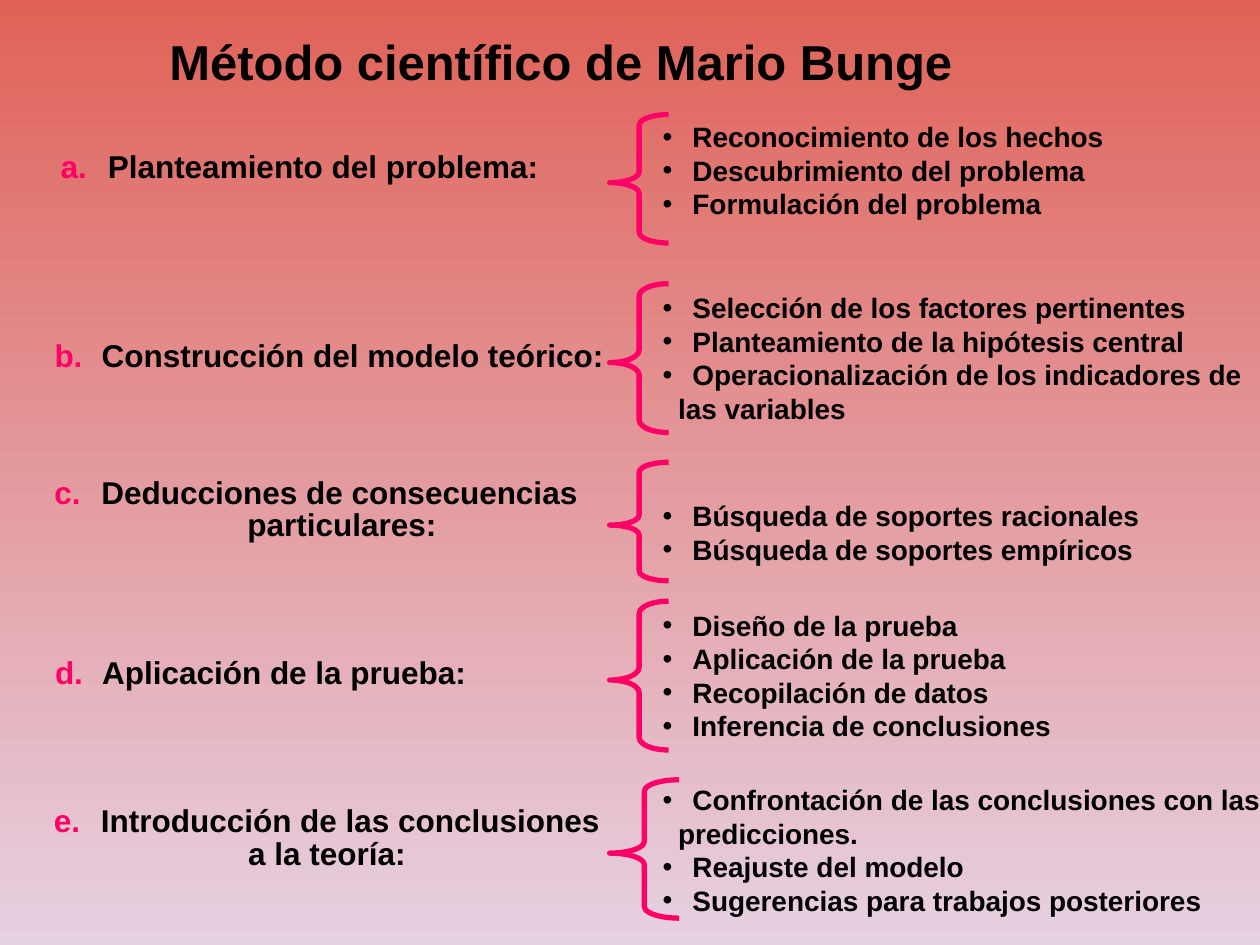
import pptx
import pptx.util
import pptx.dml.color
import pptx.enum.shapes
import pptx.enum.text
import pptx.oxml.ns
from lxml import etree

Cm = pptx.util.Cm
ALIGN = pptx.enum.text.PP_ALIGN
ANCHOR = pptx.enum.text.MSO_ANCHOR
PINK = "FF0066"
BRACE_LEFT, LIST_LEFT = 12.29, 13.36

# Lengths in cm. label_box is left, offset, width, height and list_box is
# offset, width, height; offsets count from the top of the section.
# continued holds the indexes of list lines without a bullet.
SECTIONS = [
    dict(top=2.31, height=2.59, label_box=(1.05, 0.53, 9.98, 1.3),
         label=["Planteamiento del problema:"], align=ALIGN.CENTER,
         list_box=(0.03, 9.8, 2.18),
         items=["Reconocimiento de los hechos", "Descubrimiento del problema",
                "Formulación del problema"]),
    dict(top=5.72, height=3, label_box=(1.1, 0.92, 11.4, 1.3),
         label=["Construcción del modelo teórico:"], align=ALIGN.LEFT,
         list_box=(0.2, 12, 2.59),
         items=["Selección de los factores pertinentes",
                "Planteamiento de la hipótesis central",
                "Operacionalización de los indicadores de", "las variables"],
         continued=[3]),
    dict(top=9.32, height=2.39, label_box=(0.91, 0.21, 10.92, 1.83),
         label=["Deducciones de consecuencias", "particulares:"],
         align=ALIGN.CENTER, spacing=0.85, second_indent=1.05,
         list_box=(0.41, 10.2, 2.01),
         items=["Búsqueda de soportes racionales",
                "Búsqueda de soportes empíricos"]),
    dict(top=12.12, height=3, label_box=(1.11, 1.04, 8.9, 1.17),
         label=["Aplicación de la prueba:"], align=ALIGN.LEFT, spacing=0.85,
         list_box=(0.2, 11.4, 2.59),
         items=["Diseño de la prueba", "Aplicación de la prueba",
                "Recopilación de datos", "Inferencia de conclusiones"]),
    dict(top=15.72, height=2.79, brace_width=1.4,
         label_box=(0.9, 0.43, 11.38, 1.83),
         label=["Introducción de las conclusiones", "a la teoría:"],
         align=ALIGN.CENTER, spacing=0.85,
         list_box=(0.41, 12.3, 2.01),
         items=["Confrontación de las conclusiones con las", "predicciones.",
                "Reajuste del modelo", "Sugerencias para trabajos posteriores"],
         continued=[1]),
]


def color(value):
    return pptx.dml.color.RGBColor.from_string(value)


def add_text(para, text, size=16, align=ALIGN.LEFT, spacing=None, margin=0,
             hanging=0):
    span = para.add_run()
    span.text = text
    span.font.name = "Arial"
    span.font.size = pptx.util.Pt(size)
    span.font.bold = True
    span.font.color.rgb = color("000000")
    para.alignment = align
    if spacing:
        para.line_spacing = spacing
    properties = para._p.get_or_add_pPr()
    properties.set("marL", str(Cm(margin)))
    properties.set("indent", str(-Cm(hanging)))


def add_bullet(para, kind, tint=None, **attributes):
    properties = para._p.get_or_add_pPr()
    qn = pptx.oxml.ns.qn
    if tint:
        bullet_color = etree.SubElement(properties, qn("a:buClr"))
        etree.SubElement(bullet_color, qn("a:srgbClr"), val=tint)
    etree.SubElement(properties, qn("a:buFont"), typeface="Arial")
    etree.SubElement(properties, qn(kind), **attributes)


def add_paragraphs(page, box, count, anchor):
    """Add a text box without side margins and return its paragraphs."""
    frame = page.shapes.add_textbox(*map(Cm, box)).text_frame
    frame.word_wrap = True
    frame.vertical_anchor = anchor
    frame.margin_left = frame.margin_right = 0
    return [frame.paragraphs[0]] + [frame.add_paragraph() for _ in range(count - 1)]


def add_title(page, box, text):
    title = page.shapes.title
    title.left, title.top, title.width, title.height = map(Cm, box)
    title.text_frame.vertical_anchor = ANCHOR.MIDDLE
    add_text(title.text_frame.paragraphs[0], text, size=28, align=ALIGN.CENTER)


def add_section(page, number, top, height, label_box, label, align, list_box,
                items, brace_width=1.19, spacing=None, second_indent=0,
                continued=()):
    # Detail list
    offset, width, list_height = list_box
    paras = add_paragraphs(page, (LIST_LEFT, top + offset, width, list_height),
                           len(items), ANCHOR.MIDDLE)
    for index, (para, item) in enumerate(zip(paras, items)):
        if index in continued:
            add_text(para, item, margin=0.31)
        else:
            add_text(para, item, margin=0.6, hanging=0.6)
            add_bullet(para, "a:buChar", char="•")

    # Brace
    brace = page.shapes.add_shape(
        pptx.enum.shapes.MSO_SHAPE.LEFT_BRACE,
        Cm(BRACE_LEFT), Cm(top), Cm(brace_width), Cm(height))
    brace.adjustments[0] = height / 12 / brace_width
    brace.adjustments[1] = 0.53
    brace.shadow.inherit = False
    brace.fill.background()
    brace.line.color.rgb = color(PINK)
    brace.line.width = pptx.util.Pt(3)

    # Lettered label
    left, offset, width, label_height = label_box
    paras = add_paragraphs(page, (left, top + offset, width, label_height),
                           len(label), ANCHOR.TOP)
    add_text(paras[0], label[0], size=18, align=align, spacing=spacing,
             margin=0.95, hanging=0.95)
    add_bullet(paras[0], "a:buAutoNum", tint=PINK, type="alphaLcPeriod",
               startAt=str(number))
    for para, line in zip(paras[1:], label[1:]):
        add_text(para, line, size=18, align=align, spacing=spacing,
                 margin=second_indent)


def main():
    deck = pptx.Presentation()
    deck.slide_width, deck.slide_height = Cm(25.4), Cm(19.05)
    page = deck.slides.add_slide(deck.slide_layouts[0])
    subtitle = page.placeholders[1]._element
    subtitle.getparent().remove(subtitle)

    # Background, shaded from top to bottom
    fill = page.background.fill
    fill.gradient()
    fill.gradient_angle = 270
    for stop, value in zip(fill.gradient_stops, ("E06258", "E7D1E2")):
        stop.color.rgb = color(value)

    add_title(page, (0.51, 0.53, 21.59, 1.4), "Método científico de Mario Bunge")
    for number, section in enumerate(SECTIONS, start=1):
        add_section(page, number, **section)
    deck.save("out.pptx")


if __name__ == "__main__":
    main()
